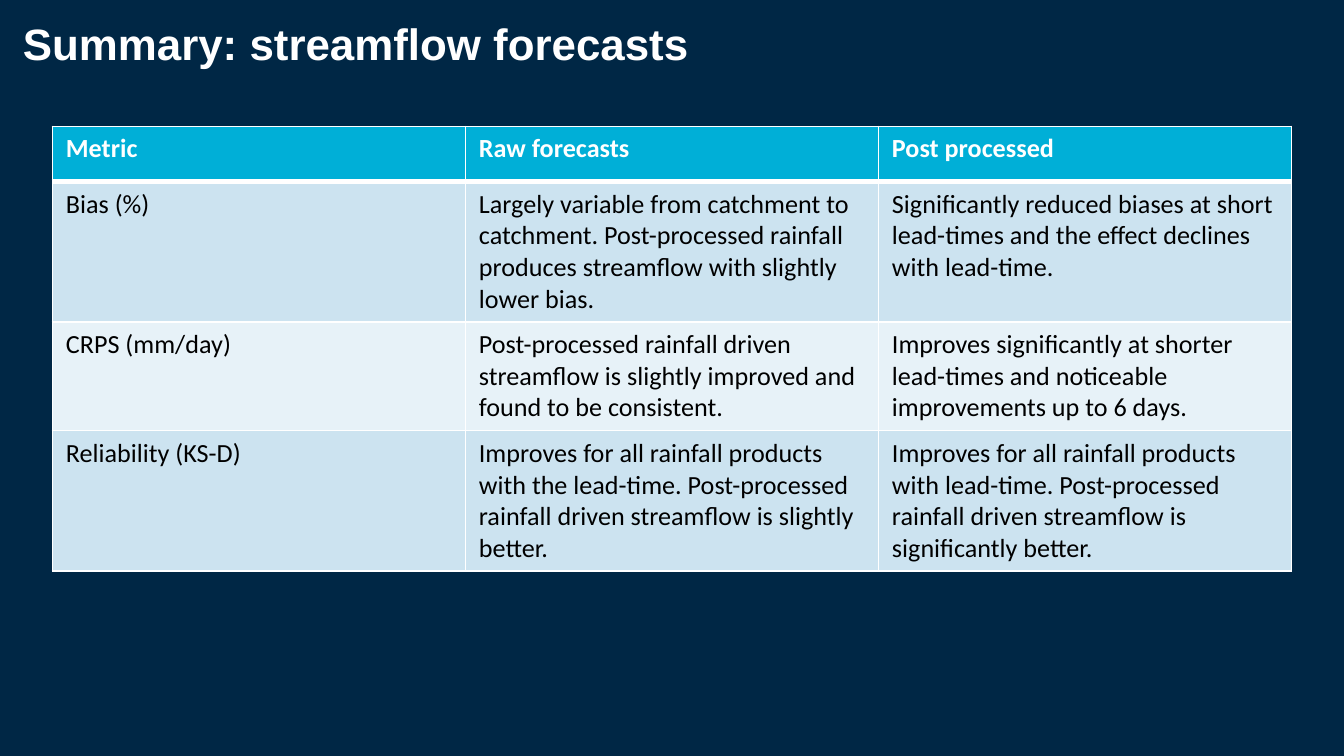
from dataclasses import dataclass

from lxml.etree import SubElement
from pptx import Presentation
from pptx.dml.color import RGBColor
from pptx.enum.text import MSO_ANCHOR
from pptx.oxml.ns import qn
from pptx.util import Inches, Pt


@dataclass(frozen=True)
class Theme:
    background: str = "002745"
    white: str = "FFFFFF"
    black: str = "000000"
    header_fill: str = "00AFD7"
    band_fills: tuple = ("CCE3F0", "E7F2F8")
    title_font: str = "Arial"
    table_font: str = "Calibri"
    title_size: float = 23.5
    table_size: float = 14
    border: float = 1
    header_rule: float = 3


class SlideBuilder:
    def __init__(self, presentation, theme):
        self.theme = theme
        self.slide = presentation.slides.add_slide(presentation.slide_layouts[6])
        fill = self.slide.background.fill
        fill.solid()
        fill.fore_color.rgb = RGBColor.from_string(theme.background)

    def style(self, paragraph, name, size, color, bold):
        font = paragraph.font
        font.name, font.size, font.bold = name, Pt(size), bold
        font.color.rgb = RGBColor.from_string(color)

    def title(self, text, left, top, width, height):
        box = self.slide.shapes.add_textbox(
            Inches(left), Inches(top), Inches(width), Inches(height))
        frame = box.text_frame
        frame.word_wrap = True
        frame.vertical_anchor = MSO_ANCHOR.TOP
        frame.margin_left = frame.margin_top = 0
        frame.margin_right = frame.margin_bottom = 0
        frame.text = text
        self.style(frame.paragraphs[0], self.theme.title_font,
                   self.theme.title_size, self.theme.white, True)

    def border(self, cell, side, width):
        properties = cell._tc.get_or_add_tcPr()
        line = SubElement(properties, qn(f"a:ln{side}"), w=str(Pt(width)))
        fill = SubElement(line, qn("a:solidFill"))
        SubElement(fill, qn("a:srgbClr"), val=self.theme.white)

    def cell(self, cell, text, row):
        theme = self.theme
        header = row == 0
        # Borders come before the fill in the cell properties
        for side in "LRTB":
            under_header = (row, side) in ((0, "B"), (1, "T"))
            self.border(cell, side, theme.header_rule if under_header else theme.border)
        cell.fill.solid()
        color = theme.header_fill if header else theme.band_fills[(row - 1) % 2]
        cell.fill.fore_color.rgb = RGBColor.from_string(color)
        cell.margin_bottom = Inches(0.06)
        cell.text = text
        self.style(cell.text_frame.paragraphs[0], theme.table_font, theme.table_size,
                   theme.white if header else theme.black, header)

    def table(self, rows, left, top, width, height, row_height):
        shape = self.slide.shapes.add_table(
            len(rows), len(rows[0]),
            Inches(left), Inches(top), Inches(width), Inches(height))
        for row, texts in enumerate(rows):
            shape.table.rows[row].height = Inches(row_height)
            for column, text in enumerate(texts):
                self.cell(shape.table.cell(row, column), text, row)
        # Rows grow with their text, so the frame is taller than the row minimums
        shape.height = Inches(height)


METRICS = [
    ("Metric", "Raw forecasts", "Post processed"),
    ("Bias (%)",
     "Largely variable from catchment to catchment. Post-processed rainfall "
     "produces streamflow with slightly lower bias.",
     "Significantly reduced biases at short lead-times and the effect declines "
     "with lead-time."),
    ("CRPS (mm/day)",
     "Post-processed rainfall driven streamflow is slightly improved and found "
     "to be consistent.",
     "Improves significantly at shorter lead-times and noticeable improvements "
     "up to 6 days."),
    ("Reliability (KS-D)",
     "Improves for all rainfall products with the lead-time. Post-processed "
     "rainfall driven streamflow is slightly better.",
     "Improves for all rainfall products with lead-time. Post-processed "
     "rainfall driven streamflow is significantly better."),
]


def main():
    presentation = Presentation()
    # Widescreen, 16:9
    presentation.slide_width = Inches(10)
    presentation.slide_height = Inches(10) * 9 // 16
    builder = SlideBuilder(presentation, Theme())

    # Heading
    builder.title("Summary: streamflow forecasts", 0.17, 0.12, 9.22, 0.69)

    # Forecast comparison
    builder.table(METRICS, 0.39, 0.94, 9.22, 3.27, row_height=0.41)

    presentation.save("out.pptx")


if __name__ == "__main__":
    main()
